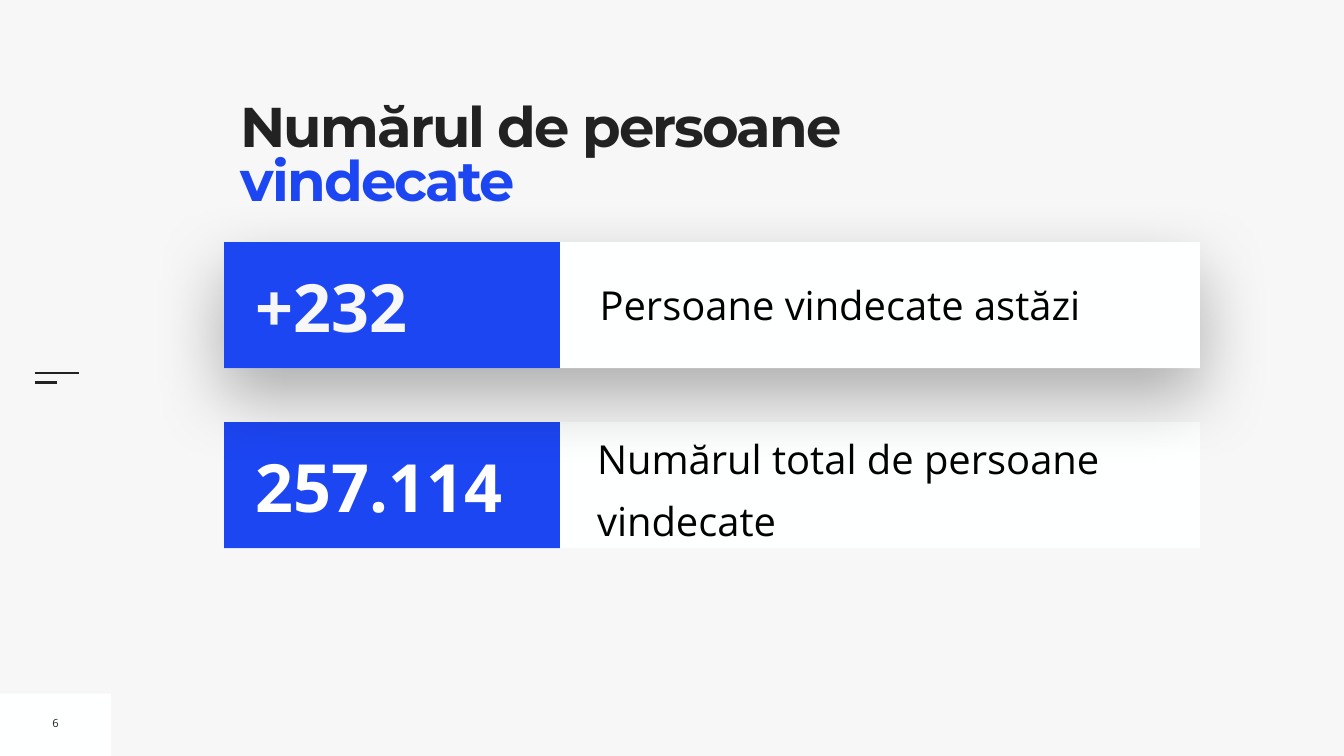
from lxml.etree import SubElement
from pptx import Presentation
from pptx.dml.color import RGBColor
from pptx.enum.shapes import MSO_CONNECTOR, MSO_SHAPE
from pptx.enum.text import MSO_ANCHOR, MSO_AUTO_SIZE, PP_ALIGN
from pptx.oxml.ns import qn
from pptx.util import Pt

COLORS = {"bg": "F7F7F7", "white": "FEFFFF", "blue": "1D46F3",
          "dark": "222222", "black": "000000", "number": "FFFFFF"}


def color(name):
    """Return the named colour."""
    return RGBColor.from_string(COLORS[name])


def add_rect(s, x, y, w, h, fill):
    """Add a plain filled rectangle."""
    sp = s.shapes.add_shape(MSO_SHAPE.RECTANGLE, Pt(x), Pt(y), Pt(w), Pt(h))
    sp.shadow.inherit = False
    sp.fill.solid()
    sp.fill.fore_color.rgb = color(fill)
    sp.line.fill.background()
    return sp


def add_shadow(sp, blur, distance, alpha):
    """Give a shape a soft black shadow falling downwards."""
    effects = sp._element.spPr.find(qn("a:effectLst"))
    shadow = SubElement(effects, qn("a:outerShdw"), blurRad=str(Pt(blur)),
                        dist=str(Pt(distance)), dir="5400000", rotWithShape="0")
    clr = SubElement(shadow, qn("a:srgbClr"), val=COLORS["black"])
    SubElement(clr, qn("a:alpha"), val=str(alpha * 1000))


def add_line(s, x, y, length):
    """Add a thin horizontal line."""
    line = s.shapes.add_connector(MSO_CONNECTOR.STRAIGHT, Pt(x), Pt(y), Pt(x + length), Pt(y))
    line.line.color.rgb = color("dark")
    line.line.width = Pt(3)
    SubElement(line._element.spPr, qn("a:effectLst"))


def add_run(p, text, size, fill, font="Open Sans", bold=False, spacing=None):
    """Add a formatted run to a paragraph."""
    r = p.add_run()
    r.text = text
    r.font.name, r.font.size, r.font.bold = font, Pt(size), bold
    r.font.color.rgb = color(fill)
    if spacing is not None:
        r._r.get_or_add_rPr().set("spc", str(round(spacing * 100)))


def set_frame(tf, inset, anchor, wrap=True):
    """Set the insets, anchor and wrapping of a text frame."""
    tf.auto_size = MSO_AUTO_SIZE.NONE
    tf.word_wrap = wrap
    tf.vertical_anchor = anchor
    tf.margin_left = tf.margin_right = tf.margin_top = tf.margin_bottom = Pt(inset)


def add_text(s, text, x, y, w, h, inset=7.2, wrap=True, align=PP_ALIGN.LEFT,
             line_spacing=None, before=None, **fmt):
    """Add a vertically centred text box."""
    tf = s.shapes.add_textbox(Pt(x), Pt(y), Pt(w), Pt(h)).text_frame
    set_frame(tf, inset, MSO_ANCHOR.MIDDLE, wrap)
    p = tf.paragraphs[0]
    p.alignment = align
    if line_spacing:
        p.line_spacing = line_spacing
    if before:
        p.space_before = Pt(before)
    add_run(p, text, **fmt)


def add_title(s, x, y, w, h, parts):
    """Place the title and fill it with coloured parts."""
    sp = s.shapes.title
    sp.left, sp.top, sp.width, sp.height = Pt(x), Pt(y), Pt(w), Pt(h)
    sp.fill.solid()
    sp.fill.fore_color.rgb = color("bg")
    set_frame(sp.text_frame, 0, MSO_ANCHOR.TOP)
    p = sp.text_frame.paragraphs[0]
    p.alignment = PP_ALIGN.LEFT
    p.line_spacing = 0.8
    for text, fill in parts:
        add_run(p, text, 80, fill, font="Montserrat", bold=True, spacing=-2.7)


def add_row(s, y, number, number_fill, label, label_box, shadow=False, **label_fmt):
    """Add a white bar with a number on blue and a label beside it."""
    bar = add_rect(s, 320, y, 1394, 180, "white")
    if shadow:
        add_shadow(bar, 100, 40, 30)
    add_text(s, label, *label_box, size=57, fill="black", **label_fmt)
    add_rect(s, 320, y, 480, 180, "blue")
    add_text(s, number, 358, y + 25.5, 434, 130, size=95, fill=number_fill, bold=True)


def main():
    """Build the slide and save it."""
    prs = Presentation()
    prs.slide_width, prs.slide_height = Pt(1920), Pt(1080)
    s = prs.slides.add_slide(prs.slide_layouts[5])
    s.background.fill.solid()
    s.background.fill.fore_color.rgb = color("bg")

    add_rect(s, 0, 991, 158.5, 89, "white")
    add_line(s, 50, 533.5, 63)
    add_line(s, 50, 546.5, 31.5)
    add_title(s, 343.5, 149, 937, 196.5,
              [("Numărul de persoane ", "dark"), ("vindecate", "blue")])
    add_text(s, "6", 67, 1014.5, 24.5, 36.5, wrap=False, align=PP_ALIGN.CENTER,
             size=16, fill="dark")
    add_row(s, 603, "257.114", "number", "Numărul total de persoane vindecate",
            (853, 604, 860, 170), inset=0, line_spacing=1.3, before=20)
    add_row(s, 346, "+232", "bg", "Persoane vindecate astăzi",
            (849.5, 394, 847, 83.5), shadow=True)
    prs.save("out.pptx")


if __name__ == "__main__":
    main()
